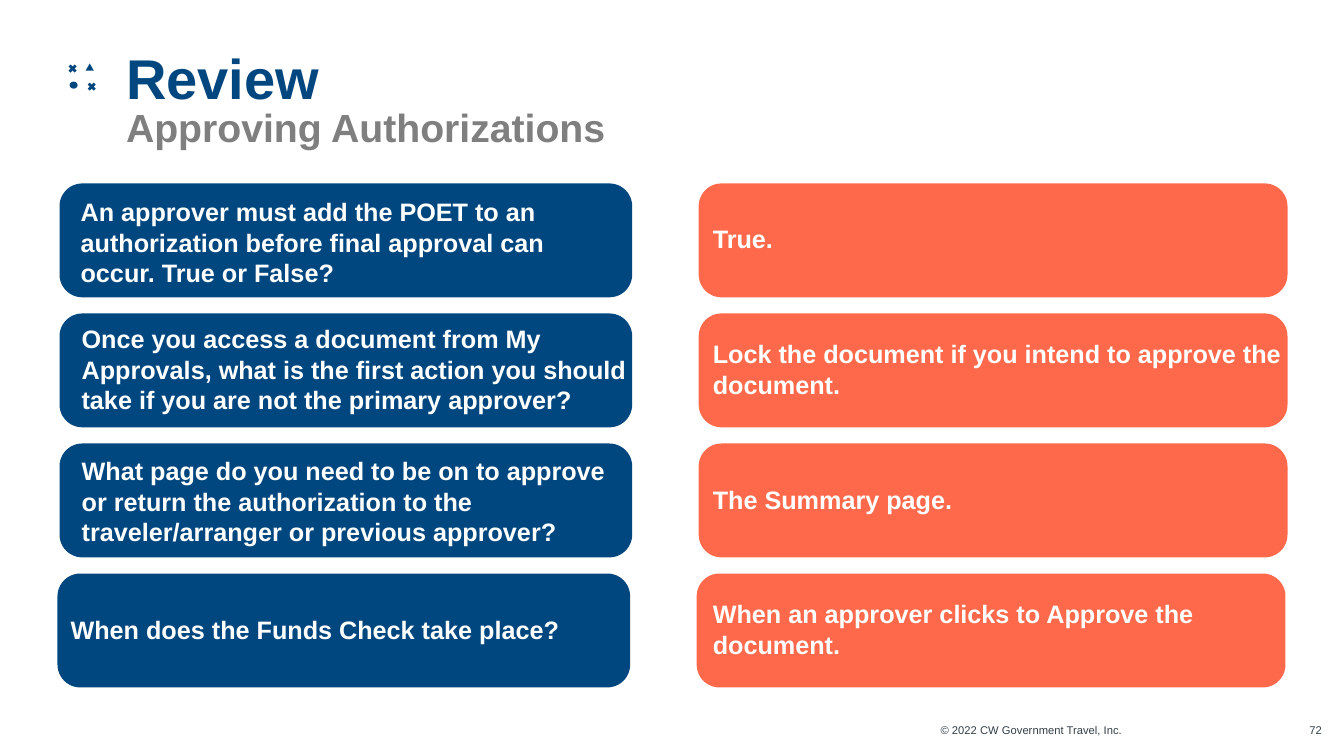
from copy import deepcopy

from lxml.etree import SubElement
from pptx import Presentation
from pptx.dml.color import RGBColor
from pptx.enum.shapes import MSO_CONNECTOR as LINE, MSO_SHAPE as SHAPE
from pptx.enum.text import MSO_ANCHOR as ANCHOR, PP_ALIGN as ALIGN
from pptx.oxml.ns import qn
from pptx.util import Inches, Pt

NAVY = RGBColor(0x00, 0x46, 0x7F)
CORAL = RGBColor(0xFF, 0x69, 0x4B)
GRAY = RGBColor(0x7F, 0x7F, 0x7F)
SLATE = RGBColor(0x33, 0x3F, 0x48)
WHITE = RGBColor(0xFF, 0xFF, 0xFF)

# Content
TITLE = [("Review ", 40, NAVY), ("Approving Authorizations", 28, GRAY)]
# Question, its left, width and drop; answer
CARDS = [
    (("An approver must add the POET to an authorization before final "
      "approval can occur. True or False?", 0.8, 5.26, 0.03), "True."),
    (("Once you access a document from My Approvals, what is the first action "
      "you should take if you are not the primary approver?", 0.81, 5.44, 0),
     "Lock the document if you intend to approve the document."),
    (("What page do you need to be on to approve or return the authorization "
      "to the traveler/arranger or previous approver?", 0.81, 5.35, 0.02),
     "The Summary page."),
    (("When does the Funds Check take place?", 0.7, 5.55, 0),
     "When an approver clicks to Approve the document."),
]
# Text, left, width
FOOT = [("© 2022 CW Government Travel, Inc.", 8.38, 2.75),
        ("72", 12.88, 0.23)]

# Card grid
TOP, STEP, HIGH = 1.82, 1.29, 1.13
LEFT, RIGHT = (0.59, 5.68), (6.93, 5.84)
SHIFT = [0, 0, 0, -0.02]

# Icon outlines
HEAD = [(1.05, 0.72), (1.05, 0.79), (1.03, 0.87), (1, 0.94), (0.98, 1),
        (0.97, 1.04), (0.98, 1.08), (0.9, 1.12), (0.79, 1.18), (0.76, 1.13),
        (0.7, 1.09), (0.6, 1.06), (0.56, 1.02), (0.56, 0.97), (0.55, 0.94),
        (0.56, 0.92), (0.51, 0.89), (0.53, 0.83), (0.56, 0.78), (0.57, 0.73),
        (0.58, 0.67), (0.61, 0.61), (0.66, 0.56), (0.72, 0.53), (0.8, 0.52),
        (0.89, 0.54), (0.97, 0.58), (1.02, 0.64)]
ROUTE = [(0.73, 0.84), (0.74, 0.81), (0.79, 0.78), (0.85, 0.75),
         (0.88, 0.72), (0.89, 0.67)]
CROSS = [(0.91, 0.86), (0.72, 0.68)]
ARM = 0.03

deck = Presentation()
deck.slide_width, deck.slide_height = Inches(13.33), Inches(7.5)
slide = deck.slides.add_slide(deck.slide_layouts[5])
shapes = slide.shapes


def put_run(para, text, size, color, bold=True):
    run = para.add_run()
    run.text = text
    font = run.font
    font.name, font.size, font.bold = "Arial", Pt(size), bold
    font.color.rgb = color
    return run


def set_frame(frame, anchor):
    frame.margin_left = frame.margin_right = 0
    frame.margin_top = frame.margin_bottom = 0
    frame.word_wrap, frame.vertical_anchor = True, anchor
    return frame.paragraphs[0]


def add_text(text, box, size, color, bold=True, align=ALIGN.LEFT):
    area = shapes.add_textbox(*map(Inches, box))
    para = set_frame(area.text_frame, ANCHOR.MIDDLE)
    para.alignment = align
    put_run(para, text, size, color, bold)


def add_fill(kind, box, color):
    shape = shapes.add_shape(kind, *map(Inches, box))
    shape.shadow.inherit = False
    shape.fill.solid()
    shape.fill.fore_color.rgb = color
    shape.line.fill.background()
    return shape


def add_path(points, width, close):
    pen = shapes.build_freeform(*points[0], scale=Inches(1))
    pen.add_line_segments(points[1:], close=close)
    shape = pen.convert_to_shape()
    shape.shadow.inherit = False
    shape.fill.background()
    shape.line.color.rgb, shape.line.width = NAVY, Pt(width)


# Icon
add_path(HEAD, 3.5, True)
add_path(ROUTE, 2, False)
add_fill(SHAPE.OVAL, (0.69, 0.81, 0.08, 0.07), NAVY)
add_fill(SHAPE.ISOSCELES_TRIANGLE, (0.85, 0.63, 0.08, 0.07), NAVY)
for x, y in CROSS:
    for rise in (ARM, -ARM):
        ends = (x - ARM, y - rise, x + ARM, y + rise)
        bar = shapes.add_connector(LINE.STRAIGHT, *map(Inches, ends))
        bar.line.color.rgb, bar.line.width = NAVY, Pt(2)
        SubElement(bar._element.spPr, qn("a:effectLst"))

# Title
title = shapes.title
title.left, title.top = Inches(1.25), Inches(0.53)
title.width, title.height = Inches(11.53), Inches(0.92)
para = set_frame(title.text_frame, ANCHOR.TOP)
para.alignment, para.line_spacing = ALIGN.LEFT, 0.85
first = put_run(para, *TITLE[0])
para.add_line_break()
para._p.findall(qn("a:br"))[0].append(deepcopy(first._r.rPr))
put_run(para, *TITLE[1])

# Question and answer cards
for row, ((ask, left, width, drop), reply) in enumerate(CARDS):
    y = TOP + row * STEP
    for (x, wide), color in ((LEFT, NAVY), (RIGHT, CORAL)):
        card = add_fill(SHAPE.ROUNDED_RECTANGLE,
                        (x + SHIFT[row], y, wide, HIGH), color)
        card.adjustments[0] = 0.2
    add_text(ask, (left, y - 0.01 + drop, width, 1.12), 18, WHITE)
    add_text(reply, (7.07, y - 0.01, 5.7, 1.12), 18, WHITE)

# Footer
for text, left, width in FOOT:
    add_text(text, (left, 7.17, width, 0.14), 8, SLATE, False, ALIGN.RIGHT)

deck.save("out.pptx")
